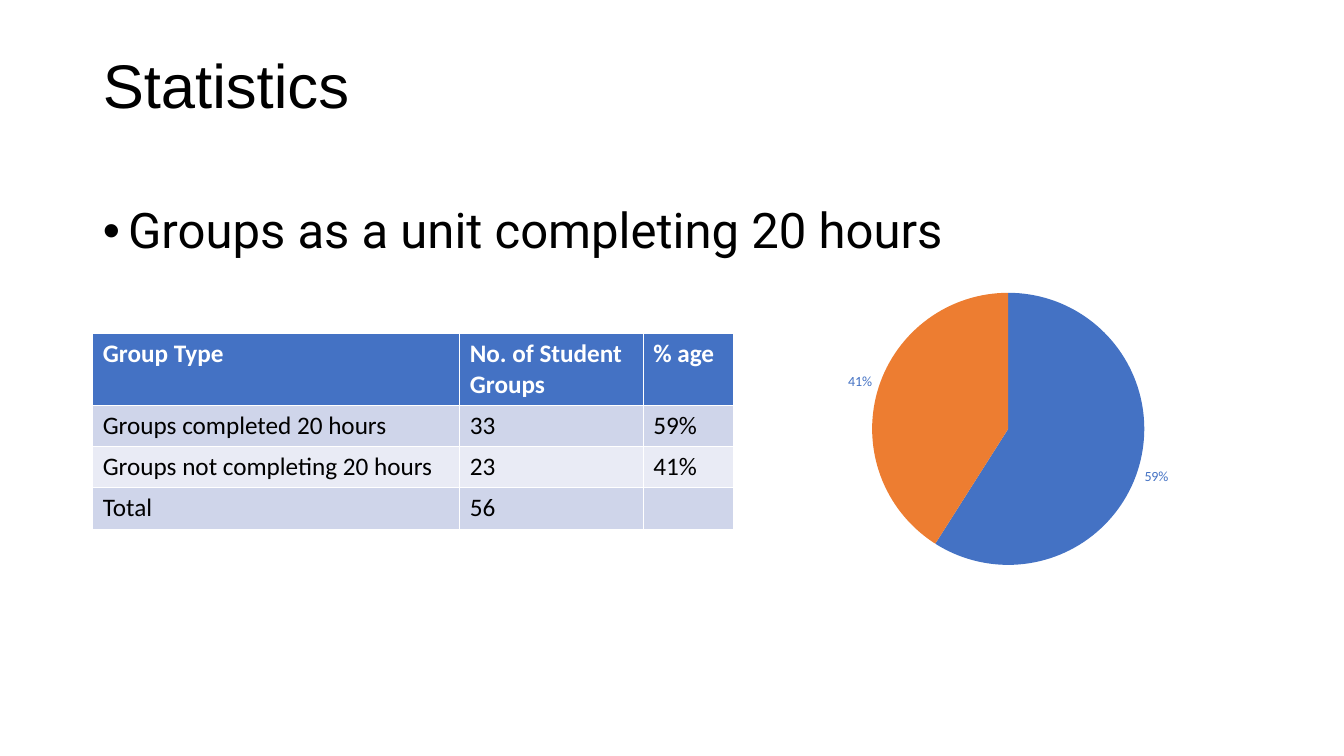
from dataclasses import dataclass

from lxml.etree import SubElement
from pptx import Presentation
from pptx.chart.data import CategoryChartData
from pptx.dml.color import RGBColor
from pptx.enum.chart import XL_CHART_TYPE, XL_LABEL_POSITION
from pptx.enum.text import MSO_ANCHOR, MSO_AUTO_SIZE, PP_ALIGN
from pptx.oxml.ns import qn
from pptx.util import Pt

PX = 9144  # EMU in one px, 100 px to the inch


@dataclass(frozen=True)
class Theme:
    ink: str = "000000"
    paper: str = "FFFFFF"
    blue: str = "4472C4"
    orange: str = "ED7D31"
    bands: tuple = ("CFD5EA", "E9EBF5")
    head: str = "Arial"
    text: str = "Roboto"
    data: str = "Calibri"
    title: int = 44
    body: int = 35
    cell: int = 18
    label: int = 10


def paint(fill, color):
    fill.solid()
    fill.fore_color.rgb = RGBColor.from_string(color)


def style(font, name, size, color, bold=False):
    look = {"name": name, "size": Pt(size), "bold": bold}
    for key, value in look.items():
        setattr(font, key, value)
    font.color.rgb = RGBColor.from_string(color)


class Page:
    def __init__(self, deck, theme):
        self.theme = theme
        self.slide = deck.slides.add_slide(deck.slide_layouts[1])

    def hold(self, index, box, anchor, text):
        """Place a template placeholder, write its text and return the paragraph."""
        shape = self.slide.placeholders[index]
        for key, value in zip(("left", "top", "width", "height"), box):
            setattr(shape, key, value * PX)
        frame = shape.text_frame
        frame.text = text
        look = {"vertical_anchor": anchor, "word_wrap": True,
                "auto_size": MSO_AUTO_SIZE.NONE}
        for key, value in look.items():
            setattr(frame, key, value)
        return frame.paragraphs[0]

    def format(self, para, name, size):
        look = {"alignment": PP_ALIGN.LEFT, "line_spacing": 0.9,
                "space_before": Pt(0)}
        for key, value in look.items():
            setattr(para, key, value)
        style(para.runs[0].font, name, size, self.theme.ink)

    def title(self, box, text):
        para = self.hold(0, box, MSO_ANCHOR.MIDDLE, text)
        self.format(para, self.theme.head, self.theme.title)

    def bullet(self, box, text, indent):
        para = self.hold(1, box, MSO_ANCHOR.TOP, text)
        props = para._p.get_or_add_pPr()
        props.set("marL", str(indent * PX))
        props.set("indent", str(-indent * PX))
        SubElement(props, qn("a:buFont")).set("typeface", self.theme.head)
        SubElement(props, qn("a:buChar")).set("char", "•")
        self.format(para, self.theme.text, self.theme.body)

    def table(self, left, top, widths, heights, rows):
        theme = self.theme
        box = (left, top, sum(widths), sum(heights))
        table = self.slide.shapes.add_table(
            len(rows), len(widths), *(n * PX for n in box)).table
        for col, width in zip(table.columns, widths):
            col.width = width * PX
        for r, (height, row) in enumerate(zip(heights, rows)):
            table.rows[r].height = height * PX
            top_row = r == 0
            back = theme.blue if top_row else theme.bands[(r - 1) % 2]
            ink = theme.paper if top_row else theme.ink
            for c, text in enumerate(row):
                cell = table.cell(r, c)
                cell.text = text
                paint(cell.fill, back)
                style(cell.text_frame.paragraphs[0].font,
                      theme.data, theme.cell, ink, top_row)

    def pie(self, box, names, values, colors, inner):
        theme = self.theme
        data = CategoryChartData()
        data.categories = names
        data.add_series("Series 1", values)
        chart = self.slide.shapes.add_chart(
            XL_CHART_TYPE.PIE, *(n * PX for n in box), data).chart
        chart.has_title = chart.has_legend = False
        style(chart.font, theme.data, theme.label, theme.ink)
        plot = chart.plots[0]
        plot.vary_by_categories = True
        for i, color in enumerate(colors):
            paint(plot.series[0].points[i].format.fill, color)
        plot.has_data_labels = True
        look = {"show_percentage": True, "show_value": False,
                "number_format": "0%", "number_format_is_linked": False,
                "position": XL_LABEL_POSITION.OUTSIDE_END}
        for key, value in look.items():
            setattr(plot.data_labels, key, value)
        style(plot.data_labels.font, theme.data, theme.label, theme.blue)
        self.fit(chart, inner)

    def fit(self, chart, inner):
        """Fix the plot area at fractions of the chart frame."""
        area = chart._chartSpace.chart.plotArea
        for old in area.findall(qn("c:layout")):
            area.remove(old)
        layout = SubElement(area, qn("c:layout"))
        area.insert(0, layout)
        manual = SubElement(layout, qn("c:manualLayout"))
        parts = {"layoutTarget": "inner", "xMode": "edge", "yMode": "edge"}
        parts.update(zip("xywh", inner))
        for key, value in parts.items():
            SubElement(manual, qn(f"c:{key}")).set("val", str(value))


def main():
    deck = Presentation()
    deck.slide_width, deck.slide_height = 1333 * PX, 750 * PX
    theme = Theme()
    page = Page(deck, theme)
    page.title((92, 31, 955, 113), "Statistics")
    page.bullet((92, 200, 1150, 476), "Groups as a unit completing 20 hours", 25)
    page.table(92, 331, (364, 182, 90), (70, 41, 41, 41), (
        ("Group Type", "No. of Student Groups", "% age"),
        ("Groups completed 20 hours", "33", "59%"),
        ("Groups not completing 20 hours", "23", "41%"),
        ("Total", "56", ""),
    ))
    page.pie((750, 277, 500, 300), ("1", "2"), (59, 41),
             (theme.blue, theme.orange), (0.23, 0.04, 0.54, 0.91))
    deck.save("out.pptx")


if __name__ == "__main__":
    main()
